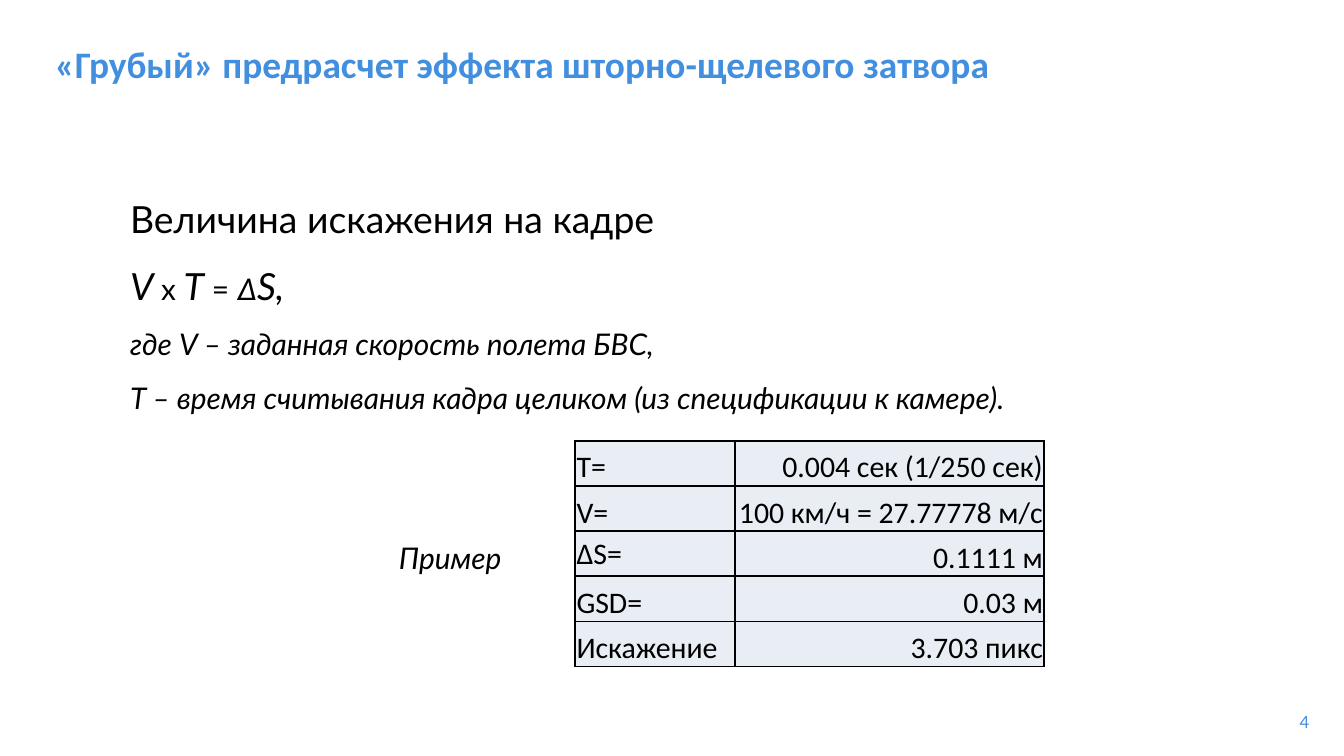
from lxml.etree import SubElement
from pptx import Presentation
from pptx.dml.color import RGBColor
from pptx.enum.text import MSO_ANCHOR as Anchor, PP_ALIGN as Align
from pptx.oxml.ns import qn
from pptx.util import Inches, Pt

BLUE = RGBColor(0x41, 0x8F, 0xDE)
BLACK = RGBColor(0, 0, 0)
CELL_FILL = RGBColor(0xE9, 0xED, 0xF4)

# A 16:9 slide on a grid of square cells, 100 columns wide
COLUMNS = 100
ROWS = COLUMNS * 9 / 16
GRID = Inches(0.1)

EXAMPLE = [
    ("T=", "0.004 сек (1/250 сек)"),
    ("V=", "100 км/ч = 27.77778 м/с"),
    ("ΔS=", "0.1111 м"),
    ("GSD=", "0.03 м"),
    ("Искажение", "3.703 пикс"),
]


def grid(*counts):
    return [round(count * GRID) for count in counts]


def add_run(paragraph, text, size=16, font="Lato", color=BLACK, bold=False, italic=False):
    run = paragraph.add_run()
    run.text = text
    run.font.size = Pt(size)
    run.font.name = font
    run.font.color.rgb = color
    run.font.bold = bold
    run.font.italic = italic


def add_box(slide, place, anchor=Anchor.TOP):
    frame = slide.shapes.add_textbox(*grid(*place)).text_frame
    frame.word_wrap = True
    frame.vertical_anchor = anchor
    return frame


def add_formula(slide):
    italic = {"italic": True}
    large = {"size": 20, "italic": True}
    lines = [
        [("Величина искажения на кадре", {"size": 20})],
        [("V ", large), ("x", {}), (" T ", large), ("=", {}),
         (" ", large), ("Δ", italic), ("S,", large)],
        [("где V – заданная скорость полета БВС,", italic)],
        [("T – время считывания кадра целиком (из спецификации к камере).", italic)],
        [("Пример", italic)],
    ]
    frame = add_box(slide, (8.7, 12.4, 72.3, 30.9))
    for index, line in enumerate(lines):
        paragraph = frame.paragraphs[0] if index == 0 else frame.add_paragraph()
        paragraph.line_spacing = 1.5
        for text, style in line:
            add_run(paragraph, text, **style)

    # The example label sits two lines lower, beside the table
    paragraph.space_before = Pt(57)
    paragraph._p.get_or_add_pPr().set("marL", str(Inches(2)))


def add_borders(cell):
    properties = cell._tc.get_or_add_tcPr()
    for position, side in enumerate(("a:lnL", "a:lnR", "a:lnT", "a:lnB")):
        line = SubElement(properties, qn(side), w=str(Pt(1)))
        fill = SubElement(line, qn("a:solidFill"))
        SubElement(fill, qn("a:srgbClr"), val=str(BLACK))
        # Borders come before the cell fill
        properties.insert(position, line)


def add_example_table(slide):
    place = grid(42.8, 32.8, 34.9, 16.8)
    table = slide.shapes.add_table(len(EXAMPLE), 2, *place).table
    table.first_row = table.horz_banding = False
    for column, width in zip(table.columns, grid(11.9, 23)):
        column.width = width
    for row, texts in zip(table.rows, EXAMPLE):
        for cell, text, align in zip(row.cells, texts, (Align.LEFT, Align.RIGHT)):
            cell.margin_left = cell.margin_top = cell.margin_right = Inches(0.01)
            cell.margin_bottom = 0
            cell.vertical_anchor = Anchor.MIDDLE if text == "ΔS=" else Anchor.BOTTOM
            cell.fill.solid()
            cell.fill.fore_color.rgb = CELL_FILL
            add_borders(cell)
            paragraph = cell.text_frame.paragraphs[0]
            paragraph.alignment = align
            add_run(paragraph, text, font="Calibri")


def main():
    deck = Presentation()
    deck.slide_width, deck.slide_height = grid(COLUMNS, ROWS)
    slide = deck.slides.add_slide(deck.slide_layouts[6])

    # Page number
    number = add_box(slide, (94.5, 52.5, 3.9, 3)).paragraphs[0]
    number.alignment = Align.RIGHT
    add_run(number, "4", size=9, color=BLUE)

    # Title
    title = add_box(slide, (3.1, 2.5, 91.5, 4.5), Anchor.MIDDLE).paragraphs[0]
    add_run(title, "«Грубый» предрасчет эффекта шторно-щелевого затвора",
            size=20, font="Calibri", color=BLUE, bold=True)

    # Formula and worked example
    add_formula(slide)
    add_example_table(slide)

    deck.save("out.pptx")


if __name__ == "__main__":
    main()
